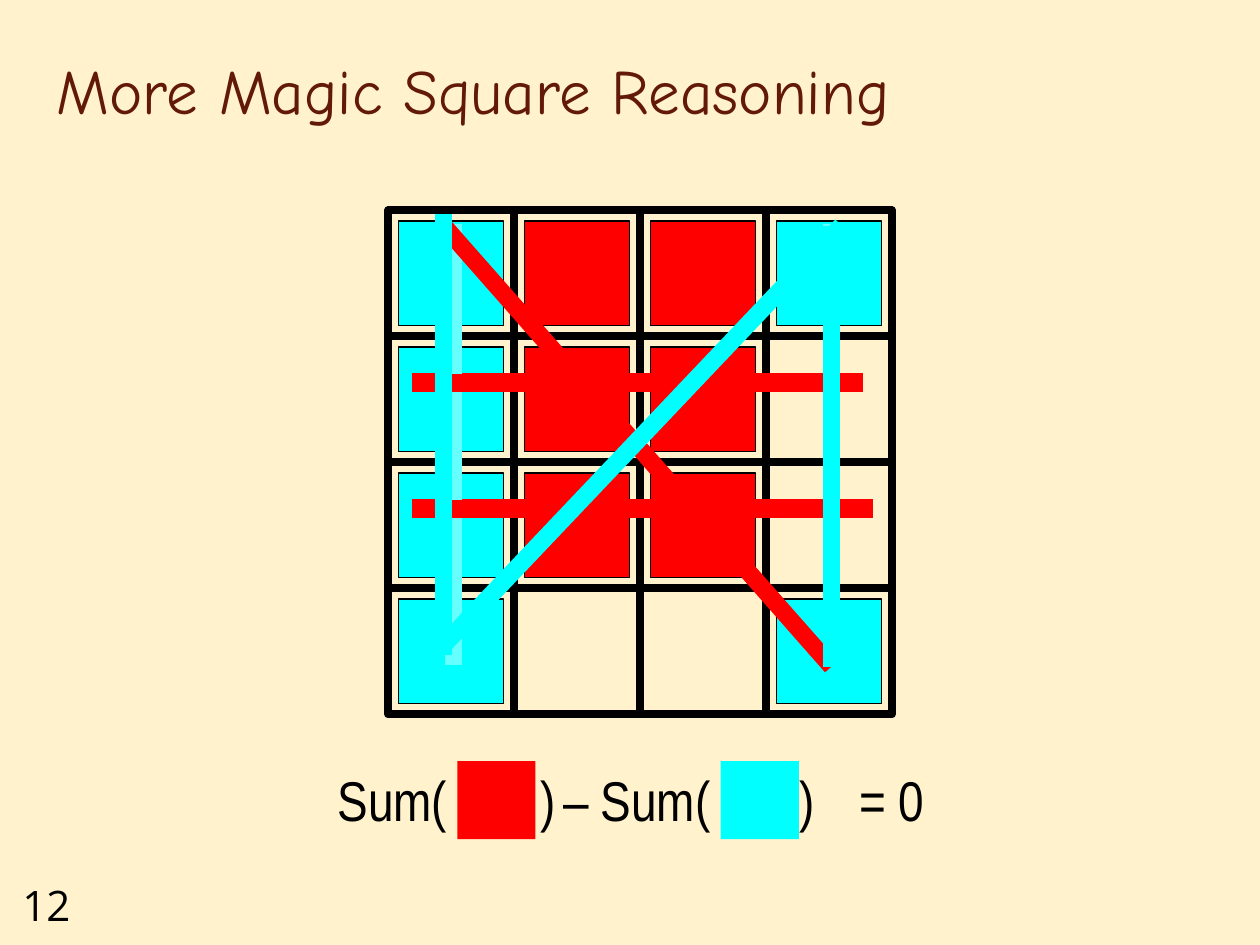
import pptx
import pptx.dml.color
import pptx.enum.shapes
import pptx.enum.text
import pptx.oxml.ns
import pptx.util
from lxml import etree
from pptx.util import Inches

PAPER, BLACK, BROWN = "FFF2CC", "000000", "631908"
RED, CYAN, PALE_CYAN = "FF0000", "00FFFF", "66FFFF"

CELL = 1
TILE = 0.83
TILE_COLORS = {"R": RED, "C": CYAN}
TILE_ROWS = ["CRRC", "CRR.", "CRR.", "C..C"]

# Each stroke: colour, start x, start y, end x, end y, from the grid's corner.
STROKES = [
    (RED, 0.19, 1.36, 3.77, 1.36),
    (RED, 0.19, 2.36, 3.85, 2.36),
    (PALE_CYAN, 0.52, 3.61, 0.52, 0.11),
    (PALE_CYAN, 3.52, 3.61, 3.52, 0.11),
    (RED, 3.52, 3.62, 0.44, 0.12),
    (RED, 0.19, 1.37, 3.77, 1.37),
    (RED, 0.19, 2.37, 3.85, 2.37),
    (CYAN, 3.52, 3.62, 3.52, 0.12),
    (CYAN, 0.44, 3.45, 3.6, 0.12),
    (CYAN, 0.44, 3.53, 0.44, 0.03),
]


def rgb(hex_color):
    return pptx.dml.color.RGBColor.from_string(hex_color)


def add_square(slide, left, top, size, fill=None, line_width=None):
    square = slide.shapes.add_shape(
        pptx.enum.shapes.MSO_SHAPE.RECTANGLE,
        Inches(left), Inches(top), Inches(size), Inches(size))
    square.shadow.inherit = False
    if fill:
        square.fill.solid()
        square.fill.fore_color.rgb = rgb(fill)
    else:
        square.fill.background()
    if line_width:
        square.line.color.rgb = rgb(BLACK)
        square.line.width = pptx.util.Pt(line_width)
    else:
        square.line.fill.background()


def add_stroke(slide, color, x1, y1, x2, y2):
    stroke = slide.shapes.add_connector(
        pptx.enum.shapes.MSO_CONNECTOR.STRAIGHT,
        Inches(x1), Inches(y1), Inches(x2), Inches(y2))
    stroke.line.color.rgb = rgb(color)
    stroke.line.width = pptx.util.Pt(10)
    etree.SubElement(stroke._element.spPr, pptx.oxml.ns.qn("a:effectLst"))


def add_text(slide, text, left, top, width, height, font, size, color=BLACK):
    box = slide.shapes.add_textbox(
        Inches(left), Inches(top), Inches(width), Inches(height))
    frame = box.text_frame
    frame.word_wrap = True
    frame.vertical_anchor = pptx.enum.text.MSO_ANCHOR.TOP
    frame.text = text
    run = frame.paragraphs[0].runs[0]
    run.font.name = font
    run.font.size = pptx.util.Pt(size)
    run.font.color.rgb = rgb(color)


def add_magic_square(slide, left, top):
    count = len(TILE_ROWS)
    for row in range(count):
        for column in range(count):
            add_square(slide, left + column * CELL, top + row * CELL, CELL, line_width=4.5)

    margin = (CELL - TILE) / 2
    for row, marks in enumerate(TILE_ROWS):
        for column, mark in enumerate(marks):
            if mark in TILE_COLORS:
                add_square(slide, left + column * CELL + margin, top + row * CELL + margin,
                           TILE, TILE_COLORS[mark], 0.75)

    for color, x1, y1, x2, y2 in STROKES:
        add_stroke(slide, color, left + x1, top + y1, left + x2, top + y2)


def add_equation(slide, left, top, height):
    """Red sum minus cyan sum equals zero, with a colour square inside each sum."""
    for color, offset in [(RED, 1.05), (CYAN, 3.14)]:
        add_square(slide, left + offset, top + 0.01, 0.62, color)
    terms = [("Sum(", 0, 1.5), (")", 1.61, 0.4), ("–", 1.79, 0.62),
             ("Sum(", 2.09, 1.5), (")", 3.67, 0.4), ("= 0", 4.14, 1.11)]
    for term, offset, width in terms:
        add_text(slide, term, left + offset, top, width, height, "Arial Narrow", 32)


def main():
    deck = pptx.Presentation()
    deck.slide_width, deck.slide_height = Inches(10), Inches(7.5)
    slide = deck.slides.add_slide(deck.slide_layouts[6])
    slide.background.fill.solid()
    slide.background.fill.fore_color.rgb = rgb(PAPER)

    add_text(slide, "12", 0.08, 6.93, 0.75, 0.5, "Open Sans", 24)
    add_text(slide, "More Magic Square Reasoning", 0.35, 0.36, 9.08, 1.21,
             "Comic Neue", 36, BROWN)
    add_magic_square(slide, 3.08, 1.67)
    add_equation(slide, 2.58, 6.03, 0.63)
    deck.save("out.pptx")


if __name__ == "__main__":
    main()
